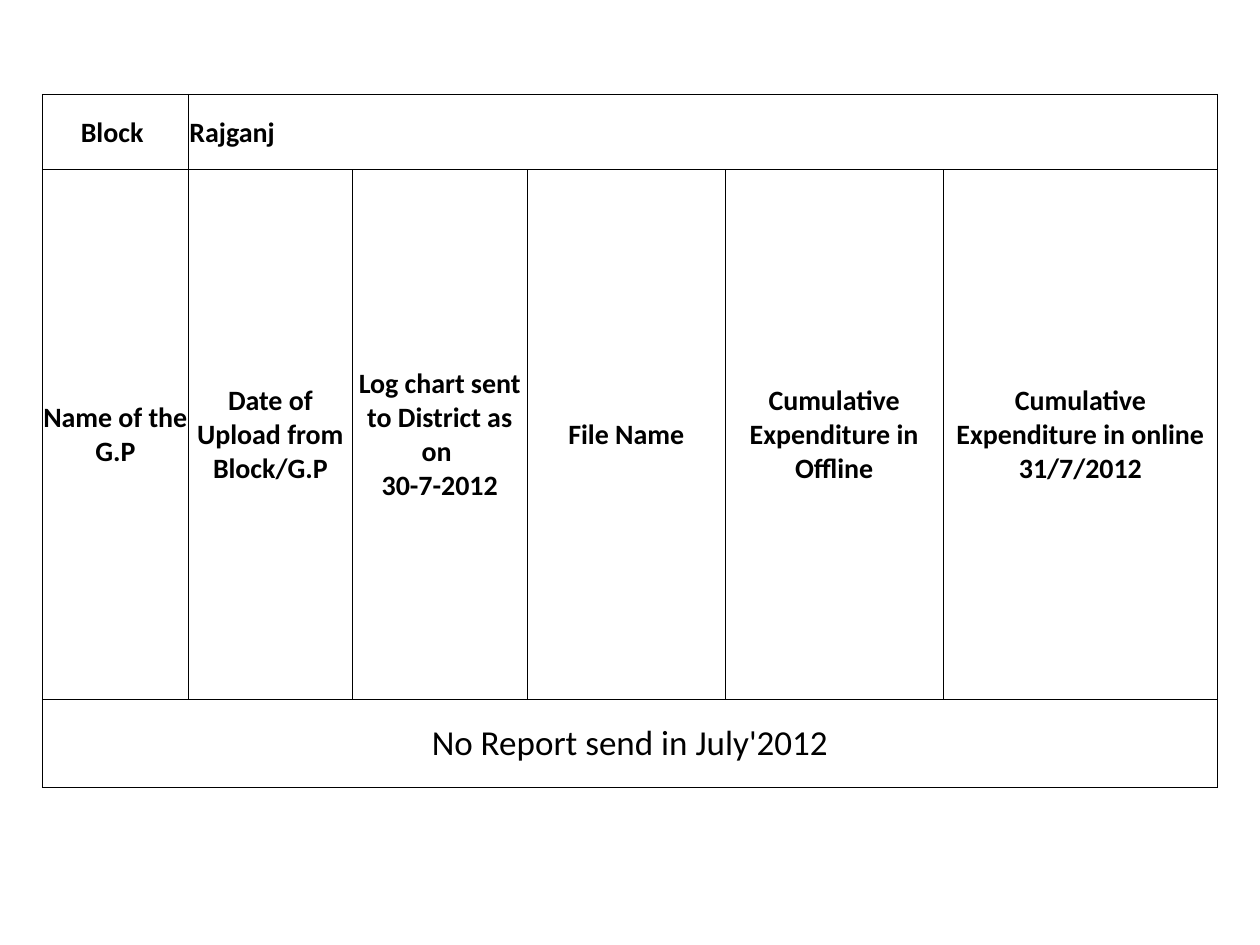
from dataclasses import dataclass

from lxml import etree
from pptx import Presentation
from pptx import util as u
from pptx.dml.color import RGBColor
from pptx.enum import text
from pptx.oxml import ns


@dataclass(frozen=True)
class Theme:
    font: str = "Calibri"
    ink: str = "000000"
    paper: str = "FFFFFF"
    head: int = 16
    note: int = 20
    rule: float = 0.5


THEME = Theme()
COLS = [2.95, 3.3, 3.53, 3.99, 4.39, 5.54]
ROWS = [1.52, 10.67, 1.78]
HEADS = [
    "Name of the G.P",
    "Date of Upload from Block/G.P",
    "Log chart sent to District as on \n30-7-2012",
    "File Name",
    "Cumulative Expenditure in Offline",
    "Cumulative Expenditure in online\n31/7/2012",
]


def frame(cell):
    """Draw a thin line on all four sides of a cell."""
    props = cell._tc.get_or_add_tcPr()
    for side in ("lnL", "lnR", "lnT", "lnB"):
        line = etree.SubElement(props, ns.qn(f"a:{side}"), w=str(u.Pt(THEME.rule)))
        fill = etree.SubElement(line, ns.qn("a:solidFill"))
        etree.SubElement(fill, ns.qn("a:srgbClr"), val=THEME.ink)


def style(cell):
    frame(cell)
    cell.fill.solid()
    cell.fill.fore_color.rgb = RGBColor.from_string(THEME.paper)
    cell.vertical_anchor = text.MSO_ANCHOR.MIDDLE
    cell.margin_left = cell.margin_right = cell.margin_top = u.Cm(0.02)
    cell.margin_bottom = 0


def write(cell, words, size=THEME.head, bold=True, align=text.PP_ALIGN.CENTER):
    para = cell.text_frame.paragraphs[0]
    para.text = words
    para.alignment = align
    font = para.font
    font.name, font.size, font.bold = THEME.font, u.Pt(size), bold
    font.color.rgb = RGBColor.from_string(THEME.ink)


def add_grid(slide):
    """Add the plain ruled table with its row and column sizes."""
    grid = slide.shapes.add_table(
        len(ROWS), len(COLS), u.Cm(0.85), u.Cm(1.9),
        u.Cm(sum(COLS)), u.Cm(sum(ROWS))).table
    grid.first_row = grid.horz_banding = False
    for col, width in zip(grid.columns, COLS):
        col.width = u.Cm(width)
    for row, height in zip(grid.rows, ROWS):
        row.height = u.Cm(height)
    for cell in grid.iter_cells():
        style(cell)
    return grid


def main():
    deck = Presentation()
    deck.slide_width, deck.slide_height = u.Cm(25.4), u.Cm(19.05)
    slide = deck.slides.add_slide(deck.slide_layouts[6])

    grid = add_grid(slide)
    last = len(COLS) - 1
    grid.cell(0, 1).merge(grid.cell(0, last))
    grid.cell(2, 0).merge(grid.cell(2, last))

    write(grid.cell(0, 0), "Block ")
    write(grid.cell(0, 1), "Rajganj", align=text.PP_ALIGN.LEFT)
    for col, head in enumerate(HEADS):
        write(grid.cell(1, col), head)
    write(grid.cell(2, 0), "No Report send in July'2012", THEME.note, bold=False)

    deck.save("out.pptx")


if __name__ == "__main__":
    main()
